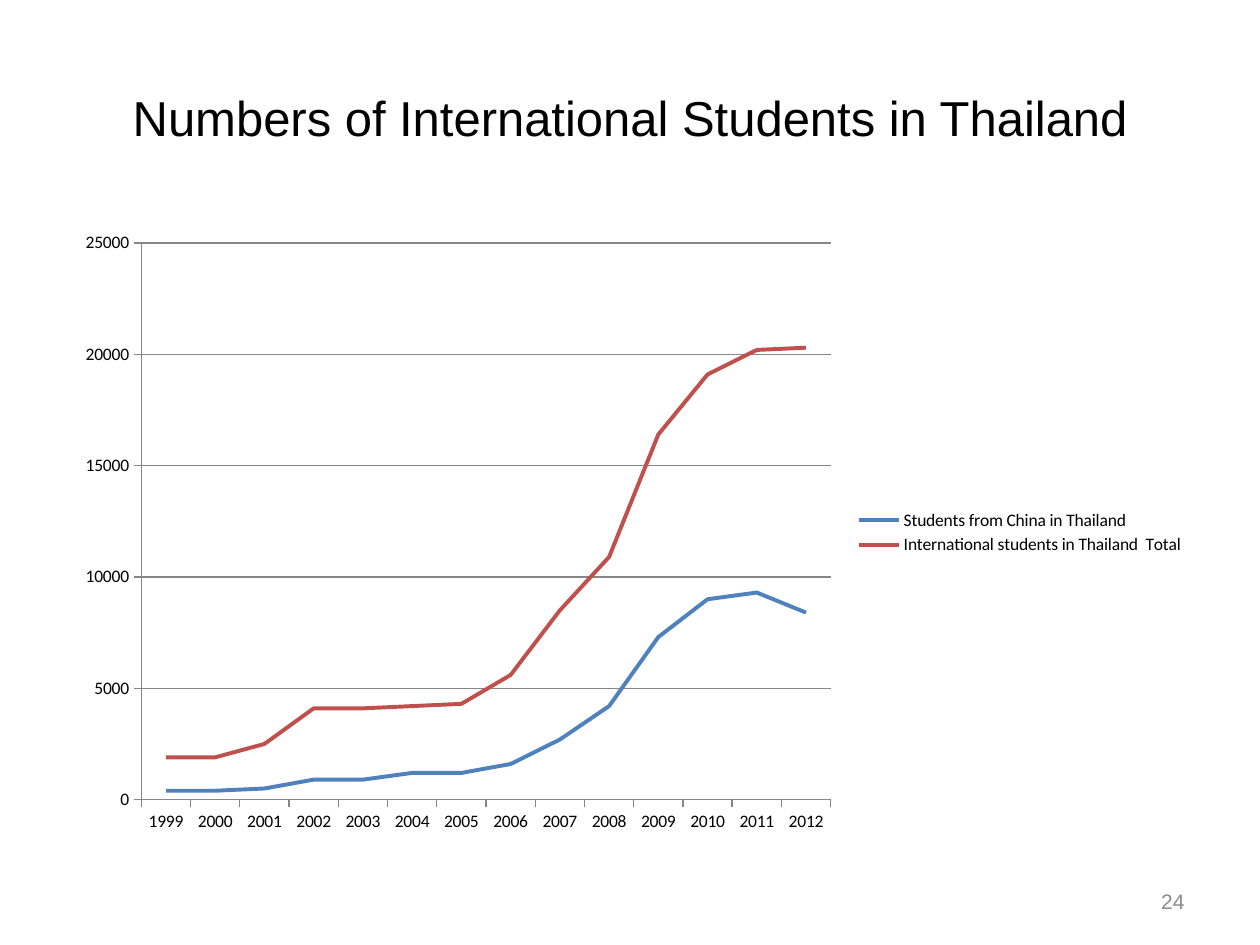
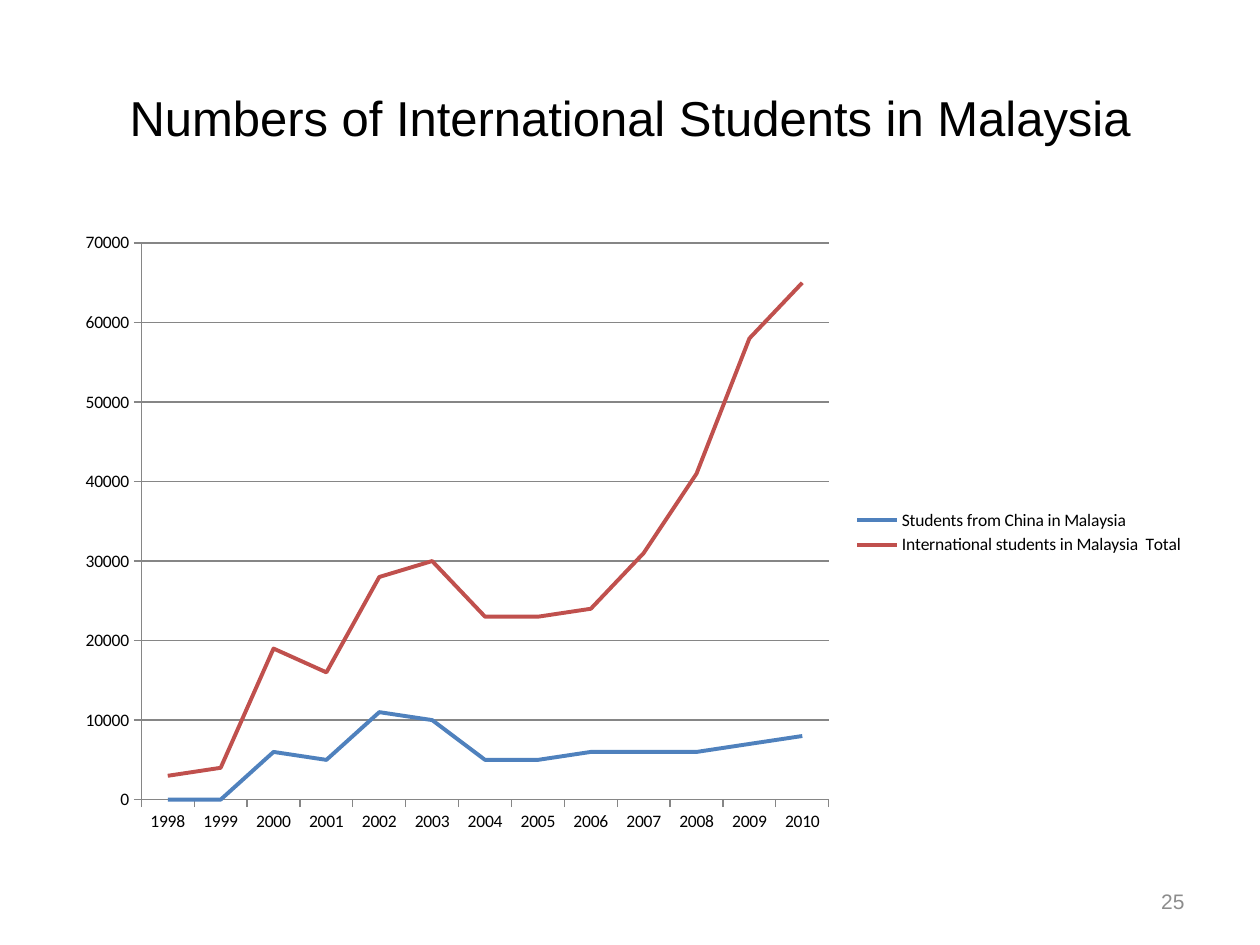
import pptx
import pptx.chart.data
import pptx.dml.color
import pptx.enum.chart
import pptx.enum.text
import pptx.util
from dataclasses import dataclass

Cm = pptx.util.Cm
Pt = pptx.util.Pt
PP_ALIGN = pptx.enum.text.PP_ALIGN
TITLE_ONLY = 5


def rgb(value):
    return pptx.dml.color.RGBColor.from_string(value)


@dataclass(frozen=True)
class Theme:
    text: str = "000000"
    muted: str = "8C8C8C"
    grid: str = "868686"
    series: tuple = ("4F81BD", "C0504D")
    text_font: str = "Arial"
    chart_font: str = "Calibri"
    title_size: int = 28
    number_size: int = 12
    chart_size: int = 10
    grid_width: float = 0.75
    series_width: float = 2.25


class Deck:
    margin, content_width = Cm(1.27), Cm(22.86)

    def __init__(self, theme):
        self.theme = theme
        self.prs = pptx.Presentation()
        self.prs.slide_width, self.prs.slide_height = Cm(25.4), Cm(19.05)
        self.s = None

    def add_slide(self):
        self.s = self.prs.slides.add_slide(self.prs.slide_layouts[TITLE_ONLY])

    def set_text(self, sp, text, size, color, align):
        """Fill a text shape with one vertically centred line."""
        tf = sp.text_frame
        tf.word_wrap = True
        tf.auto_size = pptx.enum.text.MSO_AUTO_SIZE.NONE
        tf.vertical_anchor = pptx.enum.text.MSO_ANCHOR.MIDDLE
        p = tf.paragraphs[0]
        p.alignment = align
        r = p.add_run()
        r.text = text
        r.font.name = self.theme.text_font
        r.font.size = Pt(size)
        r.font.color.rgb = rgb(color)

    def title(self, text):
        sp = self.s.shapes.title
        sp.left, sp.top = self.margin, Cm(0.76)
        sp.width, sp.height = self.content_width, Cm(3.18)
        self.set_text(sp, text, self.theme.title_size, self.theme.text, PP_ALIGN.CENTER)

    def slide_number(self, number):
        width = Cm(5.92)
        left = self.margin + self.content_width - width
        sp = self.s.shapes.add_textbox(left, Cm(17.65), width, Cm(1.02))
        self.set_text(sp, str(number), self.theme.number_size, self.theme.muted,
                      PP_ALIGN.RIGHT)

    def draw_line(self, line, color, width):
        line.color.rgb = rgb(color)
        line.width = Pt(width)

    def line_chart(self, categories, series):
        theme = self.theme
        data = pptx.chart.data.CategoryChartData()
        data.categories = categories
        for name, values in series.items():
            data.add_series(name, values)
        chart = self.s.shapes.add_chart(
            pptx.enum.chart.XL_CHART_TYPE.LINE,
            self.margin, Cm(4.45), self.content_width, Cm(12.57), data).chart
        chart.has_title = False
        chart.font.name = theme.chart_font
        chart.font.size = Pt(theme.chart_size)
        chart.font.color.rgb = rgb(theme.text)

        chart.has_legend = True
        chart.legend.position = pptx.enum.chart.XL_LEGEND_POSITION.RIGHT
        chart.legend.include_in_layout = False

        for axis in (chart.category_axis, chart.value_axis):
            axis.major_tick_mark = pptx.enum.chart.XL_TICK_MARK.OUTSIDE
            axis.minor_tick_mark = pptx.enum.chart.XL_TICK_MARK.NONE
            self.draw_line(axis.format.line, theme.grid, theme.grid_width)
        chart.value_axis.has_major_gridlines = True
        self.draw_line(chart.value_axis.major_gridlines.format.line,
                       theme.grid, theme.grid_width)

        plot = chart.plots[0]
        plot.vary_by_categories = False
        for line, color in zip(plot.series, theme.series):
            line.smooth = False
            line.marker.style = pptx.enum.chart.XL_MARKER_STYLE.NONE
            self.draw_line(line.format.line, color, theme.series_width)


FIRST_NUMBER = 24
# country, first year, students from China, all international students
COUNTRIES = [
    ("Thailand", 1999,
     [400, 400, 500, 900, 900, 1200, 1200, 1600, 2700, 4200, 7300, 9000, 9300, 8400],
     [1900, 1900, 2500, 4100, 4100, 4200, 4300, 5600, 8500, 10900, 16400, 19100,
      20200, 20300]),
    ("Malaysia", 1998,
     [0, 0, 6000, 5000, 11000, 10000, 5000, 5000, 6000, 6000, 6000, 7000, 8000],
     [3000, 4000, 19000, 16000, 28000, 30000, 23000, 23000, 24000, 31000, 41000,
      58000, 65000]),
]


def main():
    deck = Deck(Theme())
    for number, (country, first_year, chinese, total) in enumerate(COUNTRIES, FIRST_NUMBER):
        deck.add_slide()
        deck.title(f"Numbers of International Students in {country}")
        deck.slide_number(number)
        years = [str(first_year + i) for i in range(len(total))]
        deck.line_chart(years, {
            f"Students from China in {country}": chinese,
            f"International students in {country}  Total": total,
        })
    deck.prs.save("out.pptx")


if __name__ == "__main__":
    main()
